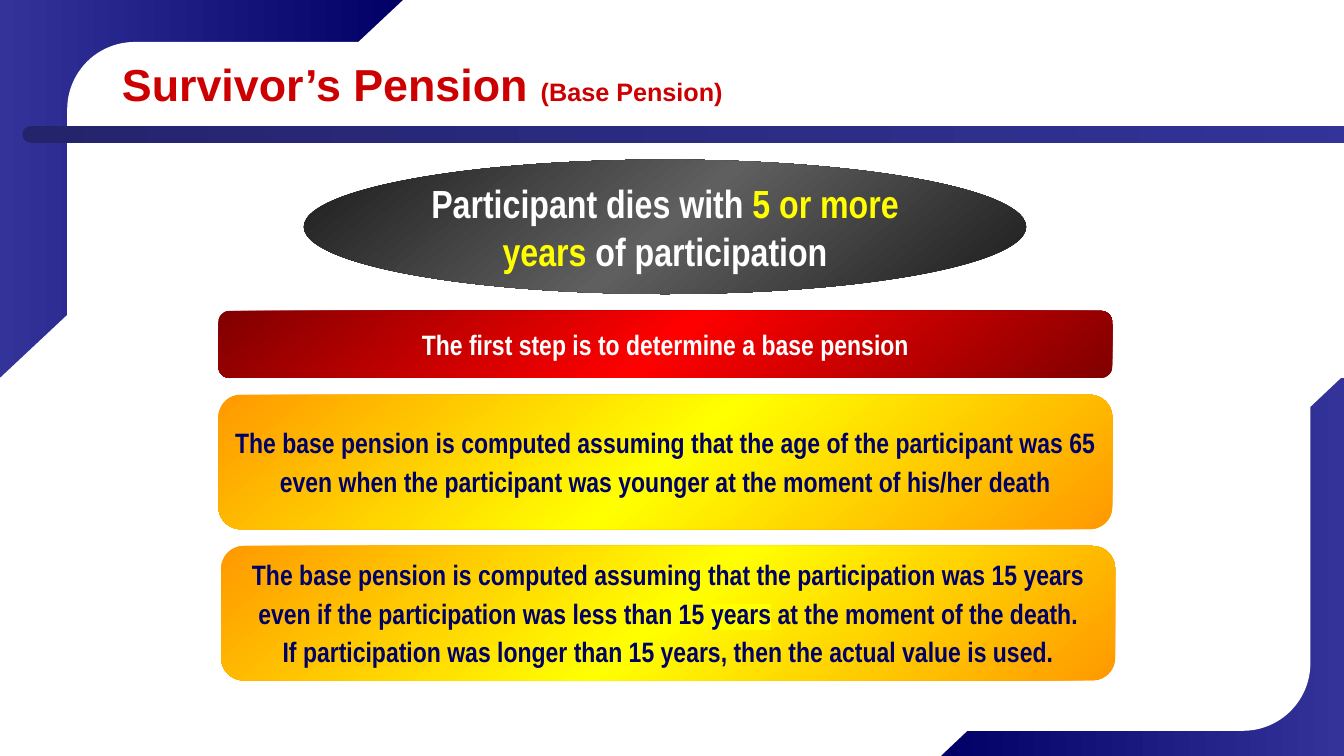
import pptx
import pptx.util
import pptx.dml.color
import pptx.enum.shapes
import pptx.enum.text
import pptx.oxml
import pptx.oxml.ns
import lxml.etree

Pt = pptx.util.Pt
RGB = pptx.dml.color.RGBColor
SHAPE = pptx.enum.shapes.MSO_SHAPE
ALIGN = pptx.enum.text.PP_ALIGN
qn = pptx.oxml.ns.qn

WHITE = RGB(0xFF, 0xFF, 0xFF)
NAVY = RGB(0x00, 0x00, 0x66)
INDIGO = RGB(0x33, 0x33, 0x99)
DARK_INDIGO = RGB(0x24, 0x24, 0x6D)
CRIMSON = RGB(0xCC, 0x00, 0x00)
CHARCOAL = RGB(0x1C, 0x1C, 0x1C)
GRAY = RGB(0x5F, 0x5F, 0x5F)
MAROON = RGB(0x80, 0x00, 0x00)
RED = RGB(0xFF, 0x00, 0x00)
ORANGE = RGB(0xFF, 0x99, 0x00)
YELLOW = RGB(0xFF, 0xFF, 0x00)

prs = pptx.Presentation()
prs.slide_width, prs.slide_height = Pt(960), Pt(540)
s = prs.slides.add_slide(prs.slide_layouts[6])


def add_shape(kind, box, colors, angle=0, corner=None, flip=None):
    """Add a borderless shape; several colors make an evenly spaced gradient."""
    sp = s.shapes.add_shape(kind, *[Pt(v) for v in box])
    sp.shadow.inherit = False
    sp.line.fill.background()
    if corner is not None:
        sp.adjustments[0] = corner
    if flip:
        sp._element.spPr.find(qn("a:xfrm")).set(flip, "1")
    if len(colors) == 1:
        sp.fill.solid()
        sp.fill.fore_color.rgb = colors[0]
    else:
        sp.fill.gradient()
        sp.fill.gradient_angle = -angle % 360
        stops = sp._element.spPr.find(qn("a:gradFill")).find(qn("a:gsLst"))
        for old in list(stops):
            stops.remove(old)
        for i, color in enumerate(colors):
            gs = lxml.etree.SubElement(stops, qn("a:gs"), pos=str(100000 * i // (len(colors) - 1)))
            lxml.etree.SubElement(gs, qn("a:srgbClr"), val=str(color))
    return sp


def write_text(sp, paragraphs, font="Arial Narrow", size=20, color=WHITE,
               align=ALIGN.CENTER, before=3.5, wrap=True):
    """Each paragraph is a list of (text, overrides) runs."""
    tf = sp.text_frame
    tf.word_wrap = wrap
    tf.vertical_anchor = pptx.enum.text.MSO_ANCHOR.MIDDLE
    for i, runs in enumerate(paragraphs):
        p = tf.paragraphs[0] if i == 0 else tf.add_paragraph()
        p.alignment = align
        p.space_before = Pt(before)
        for text, own in runs:
            r = p.add_run()
            r.text = text
            r.font.name = font
            r.font.bold = True
            r.font.size = Pt(own.get("size", size))
            r.font.color.rgb = own.get("color", color)
            if "highlight" in own:
                mark = pptx.oxml.parse_xml(
                    '<a:highlight xmlns:a="http://schemas.openxmlformats.org/drawingml/2006/main">'
                    f'<a:srgbClr val="{own["highlight"]}"/></a:highlight>')
                r.font._element.find(qn("a:solidFill")).addnext(mark)


# Corner decoration and white content panel
add_shape(SHAPE.RECTANGLE, (672.5, 270, 287.5, 270), [NAVY, INDIGO])
add_shape(SHAPE.RIGHT_TRIANGLE, (672, 268, 288, 272), [WHITE], flip="flipV")
add_shape(SHAPE.RECTANGLE, (0, 0, 288, 270), [INDIGO, NAVY])
add_shape(SHAPE.RIGHT_TRIANGLE, (0, 0, 288, 270), [WHITE], flip="flipH")
add_shape(SHAPE.RECTANGLE, (0, 270, 296, 270), [WHITE])
add_shape(SHAPE.RECTANGLE, (664, 0, 296, 270), [WHITE])
add_shape(SHAPE.ROUNDED_RECTANGLE, (48, 30, 888, 492), [WHITE], corner=0.098)

# Title and the bar below it
add_shape(SHAPE.ROUNDED_RECTANGLE, (16, 90, 976, 12), [DARK_INDIGO, INDIGO], corner=0.5)
title = s.shapes.add_textbox(Pt(80), Pt(36), Pt(832), Pt(48))
write_text(title, [[("Survivor’s Pension ", {}), ("(Base Pension)", {"size": 18})]],
           font="Arial", size=32, color=CRIMSON, align=ALIGN.LEFT, before=0)

# Condition
condition = add_shape(SHAPE.OVAL, (217, 114, 516, 96), [CHARCOAL, GRAY, CHARCOAL], angle=50)
write_text(condition, [[("Participant dies with ", {}),
                        ("5 or more years", {"color": YELLOW}),
                        (" of participation", {})]], size=28, before=5)

# Steps: left, top, height, outer color, middle color, text color, paragraphs
steps = [
    (156, 222, 48, MAROON, RED, WHITE,
     [[("The first step is to determine a base pension", {})]]),
    (156, 282, 96, ORANGE, YELLOW, NAVY,
     [[("The base pension is computed assuming that the age of the participant was 65", {})],
      [("even when the participant was younger at the moment of his/her death", {})]]),
    (158, 390, 96, ORANGE, YELLOW, NAVY,
     [[("The base pension is computed assuming that the participation was 15 years", {})],
      [("even if the participation was less than 15 ", {}),
       ("years", {"highlight": YELLOW}),
       (" at the moment of the death.", {})],
      [("If participation was longer than 15 years, then the actual value is used.", {})]]),
]
for left, top, height, outer, middle, ink, paragraphs in steps:
    step = add_shape(SHAPE.ROUNDED_RECTANGLE, (left, top, 638.5, height),
                     [outer, middle, outer], angle=50)
    write_text(step, paragraphs, color=ink, wrap=False)

prs.save("out.pptx")
